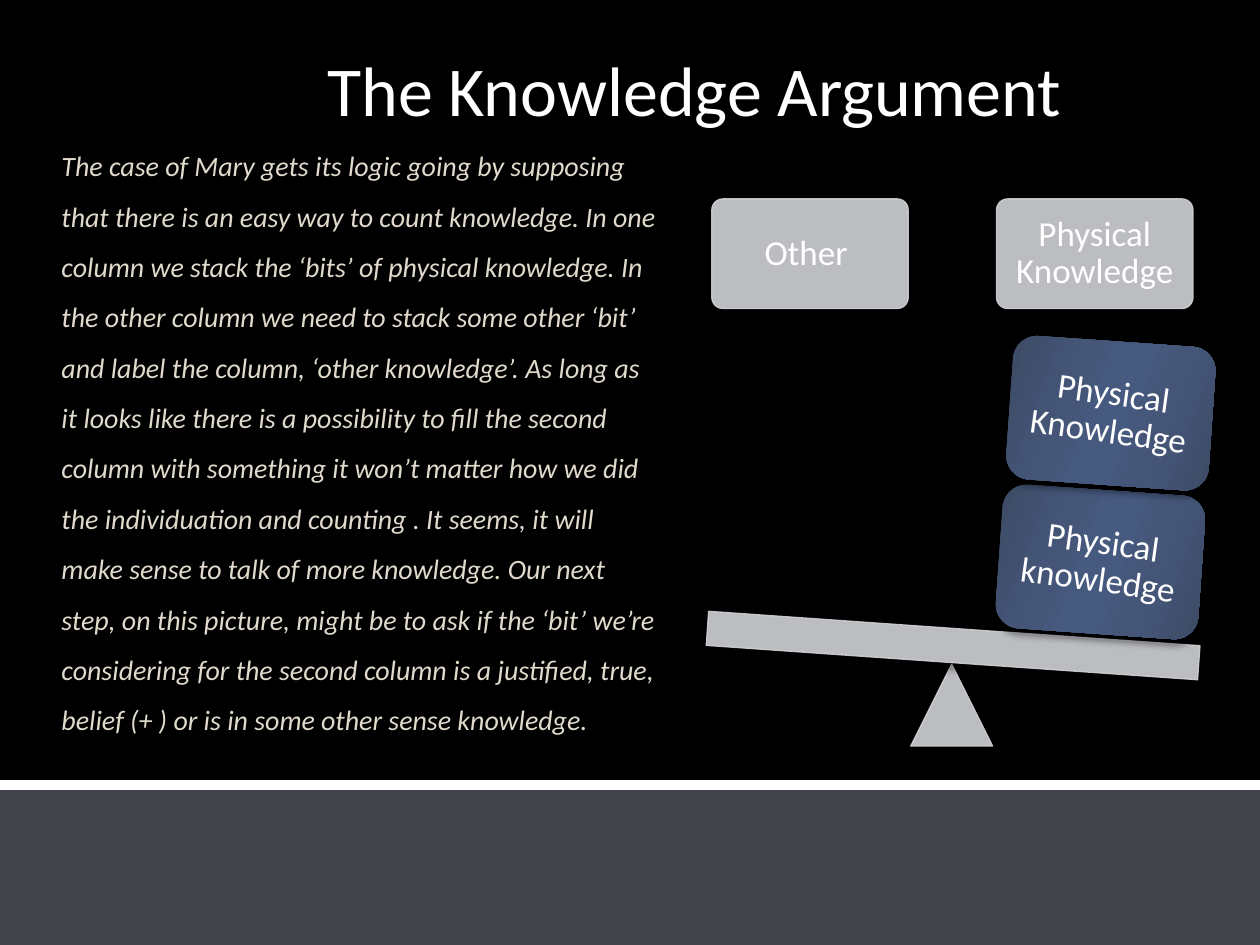
from dataclasses import dataclass

from lxml.etree import SubElement
from pptx import Presentation
from pptx.dml.color import RGBColor
from pptx.enum.shapes import MSO_CONNECTOR, MSO_SHAPE as Preset
from pptx.enum.text import MSO_ANCHOR as Anchor, PP_ALIGN as Align
from pptx.oxml.ns import qn
from pptx.shapes.autoshape import Shape
from pptx.shapes.shapetree import SlideShapes
from pptx.text.text import TextFrame
from pptx.util import Cm, Pt

BLACK = RGBColor(0x00, 0x00, 0x00)
WHITE = RGBColor(0xFF, 0xFF, 0xFF)
CREAM = RGBColor(0xE0, 0xDA, 0xCC)
SILVER = RGBColor(0xD0, 0xD2, 0xD7)
SLATE = RGBColor(0x83, 0x89, 0x95)
BLUE_STOPS = ((0, "3D4A64"), (30, "445577"), (45, "46597E"),
              (55, "46597E"), (73, "445577"), (100, "3D4A64"))
FONT = "Calibri"
TILT = 4

ARGUMENT = (
    "The case of Mary gets its logic going by supposing that there is an easy way to count "
    "knowledge. In one column we stack the ‘bits’ of physical knowledge. In the other column "
    "we need to stack some other ‘bit’ and label the column, ‘other knowledge’. As long as it "
    "looks like there is a possibility to fill the second column with something it won’t "
    "matter how we did the individuation and counting . It seems, it will make sense to talk "
    "of more knowledge. Our next step, on this picture, might be to ask if the ‘bit’ we’re "
    "considering for the second column is a justified, true, belief (+ ) or is in some other "
    "sense knowledge."
)


@dataclass(frozen=True)
class Box:
    left: float
    top: float
    width: float
    height: float

    def lengths(self) -> tuple[Cm, Cm, Cm, Cm]:
        return Cm(self.left), Cm(self.top), Cm(self.width), Cm(self.height)


@dataclass(frozen=True)
class Piece:
    preset: Preset
    box: Box
    rotation: float = 0
    label: str = ""


@dataclass(frozen=True)
class Weight:
    label: str
    box: Box


HEADINGS = [Piece(Preset.ROUNDED_RECTANGLE, Box(left, 4.01, 3.96, 2.21), label=label)
            for left, label in ((14.35, "Other "), (20.09, "Physical Knowledge"))]
SEESAW = [Piece(Preset.ISOSCELES_TRIANGLE, Box(18.36, 13.39, 1.65, 1.65)),
          Piece(Preset.RECTANGLE, Box(14.25, 12.67, 9.93, 0.69), TILT)]
WEIGHTS = [Weight("Physical knowledge", Box(20.14, 9.88, 4.09, 2.9)),
           Weight("Physical Knowledge", Box(20.35, 6.88, 4.09, 2.9))]


def set_opacity(shape: Shape, percent: int) -> None:
    for color in shape._element.spPr.iter(qn("a:srgbClr")):
        SubElement(color, qn("a:alpha"), val=str(percent * 1000))


def add_shadow(shape: Shape) -> None:
    effects = shape._element.spPr.find(qn("a:effectLst"))
    shadow = SubElement(effects, qn("a:outerShdw"), blurRad=str(Pt(4)), dist=str(Pt(3.4)),
                        dir="5400000", rotWithShape="0")
    color = SubElement(shadow, qn("a:srgbClr"), val=str(BLACK))
    SubElement(color, qn("a:alpha"), val="40000")


def write_label(frame: TextFrame, label: str) -> None:
    frame.word_wrap = True
    frame.vertical_anchor = Anchor.MIDDLE
    frame.margin_left = frame.margin_right = frame.margin_top = frame.margin_bottom = Cm(0.2)
    line = frame.paragraphs[0]
    line.text = label
    line.alignment = Align.CENTER
    line.line_spacing = 0.9
    line.font.name, line.font.size, line.font.color.rgb = FONT, Pt(20), WHITE


def draw_piece(shapes: SlideShapes, piece: Piece) -> None:
    shape = shapes.add_shape(piece.preset, *piece.box.lengths())
    shape.rotation = piece.rotation
    shape.shadow.inherit = False
    if piece.preset == Preset.ROUNDED_RECTANGLE:
        shape.adjustments[0] = 0.1
    shape.fill.solid()
    shape.fill.fore_color.rgb = SILVER
    shape.line.color.rgb = SILVER
    shape.line.width = Pt(0.75)
    set_opacity(shape, 90)
    add_shadow(shape)
    if piece.label:
        write_label(shape.text_frame, piece.label)


def draw_weight(shapes: SlideShapes, weight: Weight) -> None:
    block = shapes.add_shape(Preset.ROUNDED_RECTANGLE, *weight.box.lengths())
    block.rotation = TILT
    block.shadow.inherit = False
    block.line.fill.background()
    block.fill.gradient()
    block.fill.gradient_angle = 344
    stops = block._element.spPr.find(qn("a:gradFill")).find(qn("a:gsLst"))
    for stop in list(stops):
        stops.remove(stop)
    for position, color in BLUE_STOPS:
        stop = SubElement(stops, qn("a:gs"), pos=str(position * 1000))
        SubElement(stop, qn("a:srgbClr"), val=color)
    add_shadow(block)
    label = shapes.add_textbox(*weight.box.lengths())
    label.rotation = 2 * TILT
    write_label(label.text_frame, weight.label)


def draw_text(shapes: SlideShapes, box: Box, text: str, size: int, color: RGBColor,
              space_before: int, anchor: Anchor = Anchor.TOP, line_spacing: float = 1.0,
              italic: bool = False) -> None:
    frame = shapes.add_textbox(*box.lengths()).text_frame
    frame.word_wrap = True
    frame.vertical_anchor = anchor
    paragraph = frame.paragraphs[0]
    paragraph.text = text
    paragraph.space_before = Pt(space_before)
    paragraph.line_spacing = line_spacing
    font = paragraph.font
    font.name, font.size, font.color.rgb, font.italic = FONT, Pt(size), color, italic


def draw_floor(shapes: SlideShapes) -> None:
    floor = shapes.add_shape(Preset.RECTANGLE, *Box(0, 15.93, 25.4, 3.12).lengths())
    floor.shadow.inherit = False
    floor.fill.solid()
    floor.fill.fore_color.rgb = SLATE
    floor.line.fill.background()
    set_opacity(floor, 50)
    edge = shapes.add_connector(MSO_CONNECTOR.STRAIGHT, Cm(0), Cm(15.82), Cm(25.4), Cm(15.82))
    edge.line.color.rgb = WHITE
    edge.line.width = Pt(6)
    SubElement(edge._element.spPr, qn("a:effectLst"))


def main() -> None:
    """Build the slide on the Knowledge Argument with its tilted seesaw."""
    deck = Presentation()
    deck.slide_width, deck.slide_height = Cm(25.4), Cm(19.05)
    slide = deck.slides.add_slide(deck.slide_layouts[6])
    slide.background.fill.solid()
    slide.background.fill.fore_color.rgb = BLACK
    shapes = slide.shapes
    draw_floor(shapes)
    draw_text(shapes, Box(6.35, 0.64, 15.98, 2.11), "The Knowledge Argument", 40, WHITE, 4,
              anchor=Anchor.BOTTOM)
    draw_text(shapes, Box(0.99, 2.54, 12.57, 16.51), ARGUMENT, 16, CREAM, 12,
              line_spacing=1.5, italic=True)
    for piece in HEADINGS + SEESAW:
        draw_piece(shapes, piece)
    for weight in WEIGHTS:
        draw_weight(shapes, weight)
    deck.save("out.pptx")


if __name__ == "__main__":
    main()
